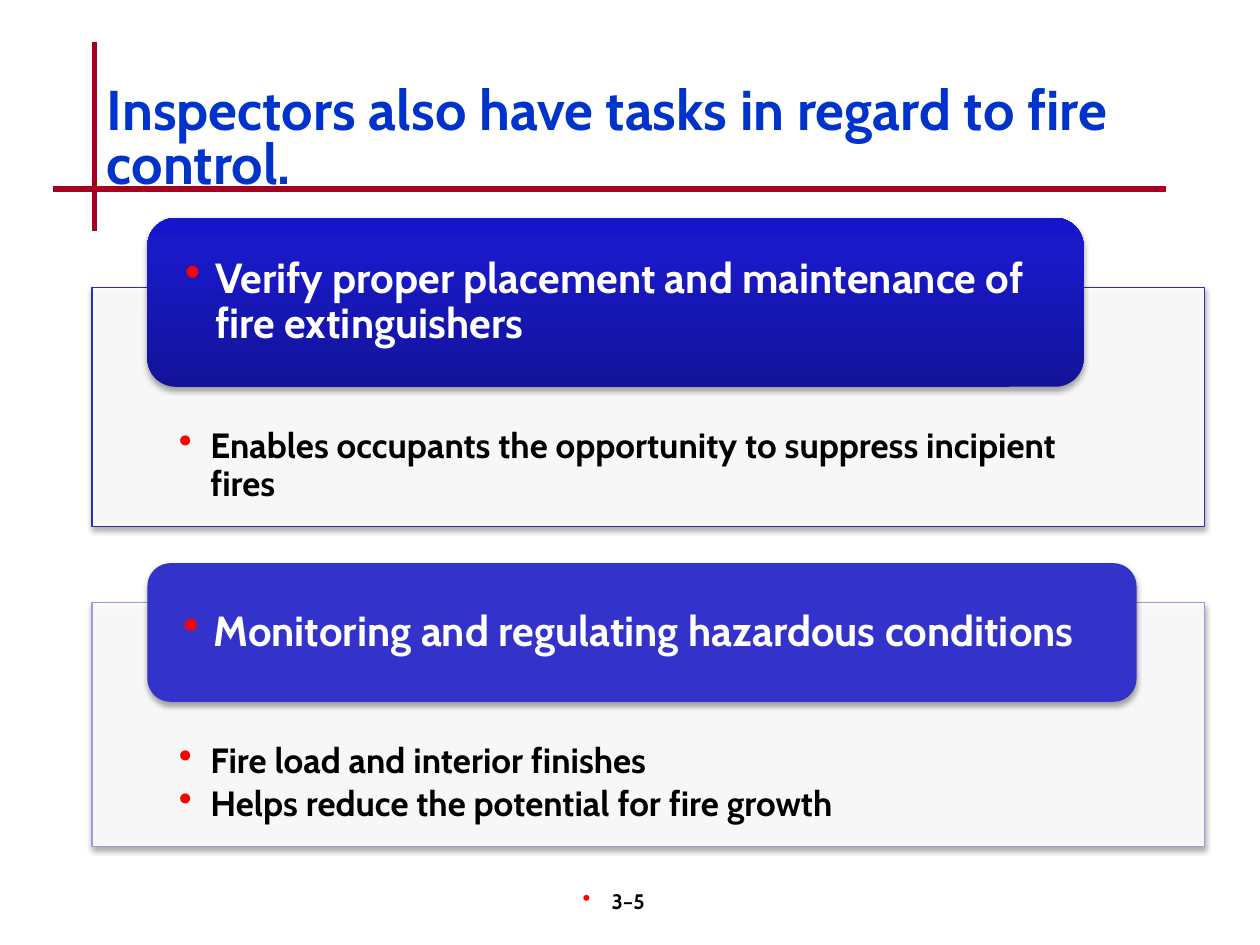
from lxml.etree import SubElement
from pptx import Presentation
from pptx.dml.color import RGBColor
from pptx.enum.shapes import MSO_CONNECTOR, MSO_SHAPE
from pptx.enum.text import MSO_ANCHOR, PP_ALIGN
from pptx.oxml import parse_xml
from pptx.oxml.ns import nsdecls, qn
from pptx.util import Inches, Pt

COLORS = {
    "rule": "A50021", "title": "0033CC", "bullet": "FF0000", "text": "000000",
    "white": "FFFFFF", "first_edge": "2E2EB9", "second_edge": "9C9CDD",
    "second_tab": "3333CC",
    "deep": "13139A", "middle": "1919C8", "bright": "1515CC",
}
FORMATS = {
    "title": {"size": Pt(32), "color": "title", "line_spacing": 0.8},
    "heading": {"size": Pt(24), "color": "white", "line_spacing": 0.9,
                "space_after": Pt(8.4), "indent": 0.24},
    "detail": {"size": Pt(20), "color": "text", "line_spacing": 0.9,
               "space_after": Pt(3), "indent": 0.25},
    "number": {"size": Pt(12), "color": "text", "alignment": PP_ALIGN.CENTER,
               "indent": 0.23},
}
PARAGRAPH_KEYS = ("line_spacing", "space_after", "alignment")
COLUMNS, ROWS = 100, 75  # grid cells across and down the slide


class SlideBuilder:
    font_name = "Cabin"

    def __init__(self, deck):
        self.deck = deck
        self.page = deck.slides.add_slide(deck.slide_layouts[6])

    def place(self, columns, rows):
        return (round(self.deck.slide_width * columns / COLUMNS),
                round(self.deck.slide_height * rows / ROWS))

    def color(self, name):
        return RGBColor.from_string(COLORS[name])

    def rule(self, start, end):
        line = self.page.shapes.add_connector(
            MSO_CONNECTOR.STRAIGHT, *self.place(*start), *self.place(*end))
        line.line.color.rgb = self.color("rule")
        line.line.width = Pt(3)
        SubElement(line._element.spPr, qn("a:effectLst"))

    def shape(self, kind, area, fill, edge=None, opacity=None):
        box = self.page.shapes.add_shape(
            kind, *self.place(*area[:2]), *self.place(*area[2:]))
        if isinstance(fill, str):
            box.fill.solid()
            box.fill.fore_color.rgb = self.color(fill)
        else:
            self.gradient(box, fill)
        if opacity:
            tint = box._element.spPr.find(".//" + qn("a:srgbClr"))
            SubElement(tint, qn("a:alpha"), val=str(opacity * 1000))
        if edge:
            box.line.color.rgb = self.color(edge)
            box.line.width = Pt(0.75)
        else:
            box.line.fill.background()
        self.shadow(box)

    def gradient(self, box, stops):
        marks = "".join(
            f'<a:gs pos="{share * 1000}"><a:srgbClr val="{COLORS[name]}"/></a:gs>'
            for share, name in stops)
        box._element.spPr.find(qn("a:prstGeom")).addnext(parse_xml(
            f'<a:gradFill {nsdecls("a")} rotWithShape="1"><a:gsLst>{marks}</a:gsLst>'
            '<a:lin ang="16200000" scaled="0"/></a:gradFill>'))

    def shadow(self, box):
        box.shadow.inherit = False
        effects = box._element.spPr.find(qn("a:effectLst"))
        effects.append(parse_xml(
            f'<a:outerShdw {nsdecls("a")} blurRad="{Pt(3.1)}" dist="{Pt(1.8)}" '
            'dir="5400000" rotWithShape="0"><a:srgbClr val="000000">'
            '<a:alpha val="35000"/></a:srgbClr></a:outerShdw>'))

    def bullet(self, para, indent):
        properties = para._p.get_or_add_pPr()
        properties.set("marL", str(Inches(indent)))
        properties.set("indent", str(-Inches(indent)))
        tint = SubElement(properties, qn("a:buClr"))
        SubElement(tint, qn("a:srgbClr"), val=COLORS["bullet"])
        SubElement(properties, qn("a:buSzPct"), val="110000")
        SubElement(properties, qn("a:buChar"), char="•")

    def text(self, area, lines, style, anchor=MSO_ANCHOR.TOP,
             insets=(0.1, 0.05, 0.1, 0.05)):
        box = self.page.shapes.add_textbox(
            *self.place(*area[:2]), *self.place(*area[2:]))
        frame = box.text_frame
        frame.word_wrap = True
        frame.vertical_anchor = anchor
        for side, inset in zip(("left", "top", "right", "bottom"), insets):
            setattr(frame, f"margin_{side}", Inches(inset))
        values = FORMATS[style]
        for index, line in enumerate(lines):
            para = frame.add_paragraph() if index else frame.paragraphs[0]
            if "indent" in values:
                self.bullet(para, values["indent"])
            for key in PARAGRAPH_KEYS:
                if key in values:
                    setattr(para, key, values[key])
            span = para.add_run()
            span.text = line
            font = {"name": self.font_name, "size": values["size"], "bold": True}
            for key, value in font.items():
                setattr(span.font, key, value)
            span.font.color.rgb = self.color(values["color"])

    def task(self, panel, tab, edge, fill, heading, details):
        self.shape(MSO_SHAPE.RECTANGLE, panel, "white", edge, opacity=90)
        # Details fill the part of the panel below the tab
        left, top, width, height = panel
        self.text((left, top + 11.2, width, height - 12.8), details, "detail",
                  insets=(0.69, 0, 0.69, 0))
        self.shape(MSO_SHAPE.ROUNDED_RECTANGLE, tab, fill)
        # The heading keeps clear of the rounded corners
        left, top, width, height = tab
        gap = height * 0.05
        inner = (left + gap, top + gap, width - 2 * gap, height - 2 * gap)
        self.text(inner, [heading], "heading", MSO_ANCHOR.MIDDLE,
                  (0.23, 0, 0.23, 0))


def main():
    deck = Presentation()
    deck.slide_width, deck.slide_height = Inches(10), Inches(7.5)
    slide = SlideBuilder(deck)

    # Crossed rules, page number and title
    slide.rule((7.5, 3.3), (7.5, 18.3))
    slide.rule((4.2, 15), (92.5, 15))
    slide.text((39.2, 70, 20.8, 5), ["3–5"], "number",
               insets=(0, 0.05, 0.18, 0.05))
    slide.text((7.5, 6.4, 85, 10),
               ["Inspectors also have tasks in regard to fire control."],
               "title", MSO_ANCHOR.BOTTOM, (0.1, 0.05, 0.1, 0.09))

    # Two tasks, each a panel with a heading tab
    slide.task((7.3, 22.8, 88.3, 19), (11.7, 17.3, 74.3, 13.4), "first_edge",
               [(0, "deep"), (80, "middle"), (100, "bright")],
               "Verify proper placement and maintenance of fire extinguishers",
               ["Enables occupants the opportunity to suppress incipient fires"])
    slide.task((7.3, 47.8, 88.3, 19.4), (11.7, 44.7, 78.5, 11), "second_edge",
               "second_tab", "Monitoring and regulating hazardous conditions",
               ["Fire load and interior finishes",
                "Helps reduce the potential for fire growth"])

    deck.save("out.pptx")


if __name__ == "__main__":
    main()
